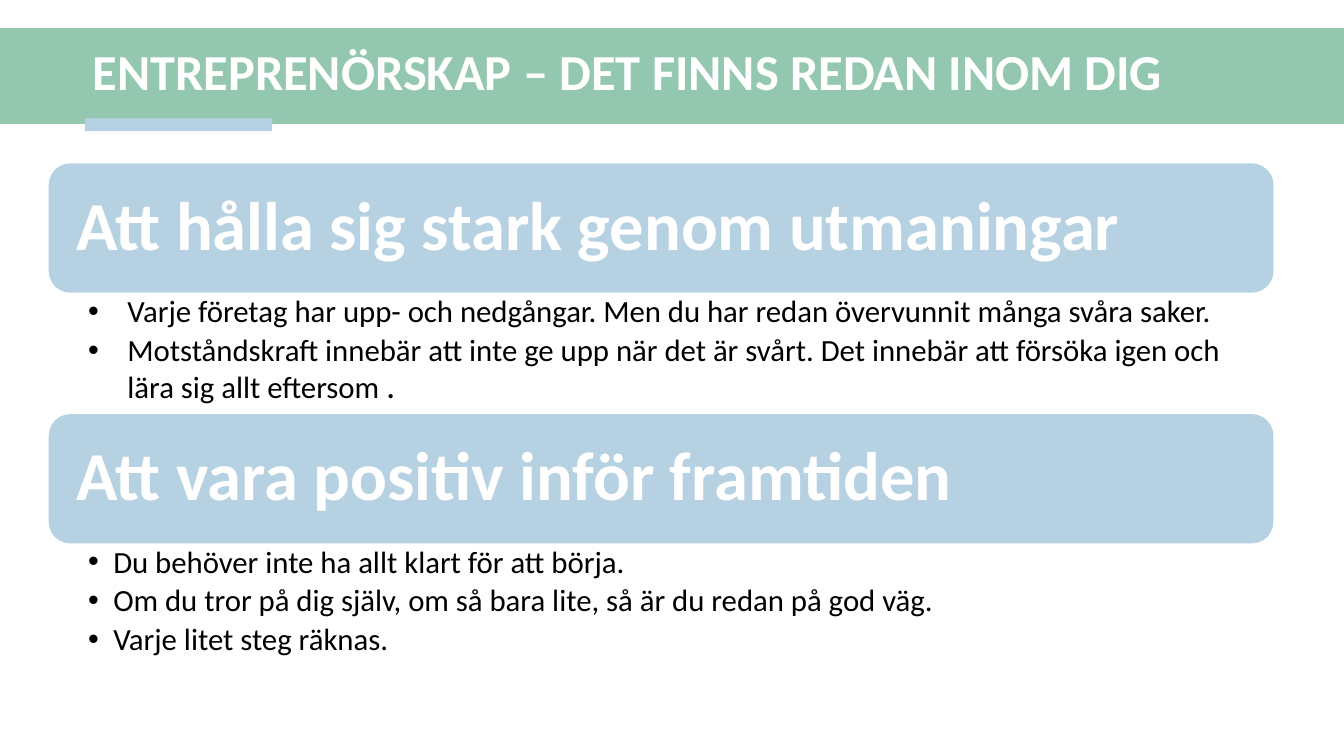
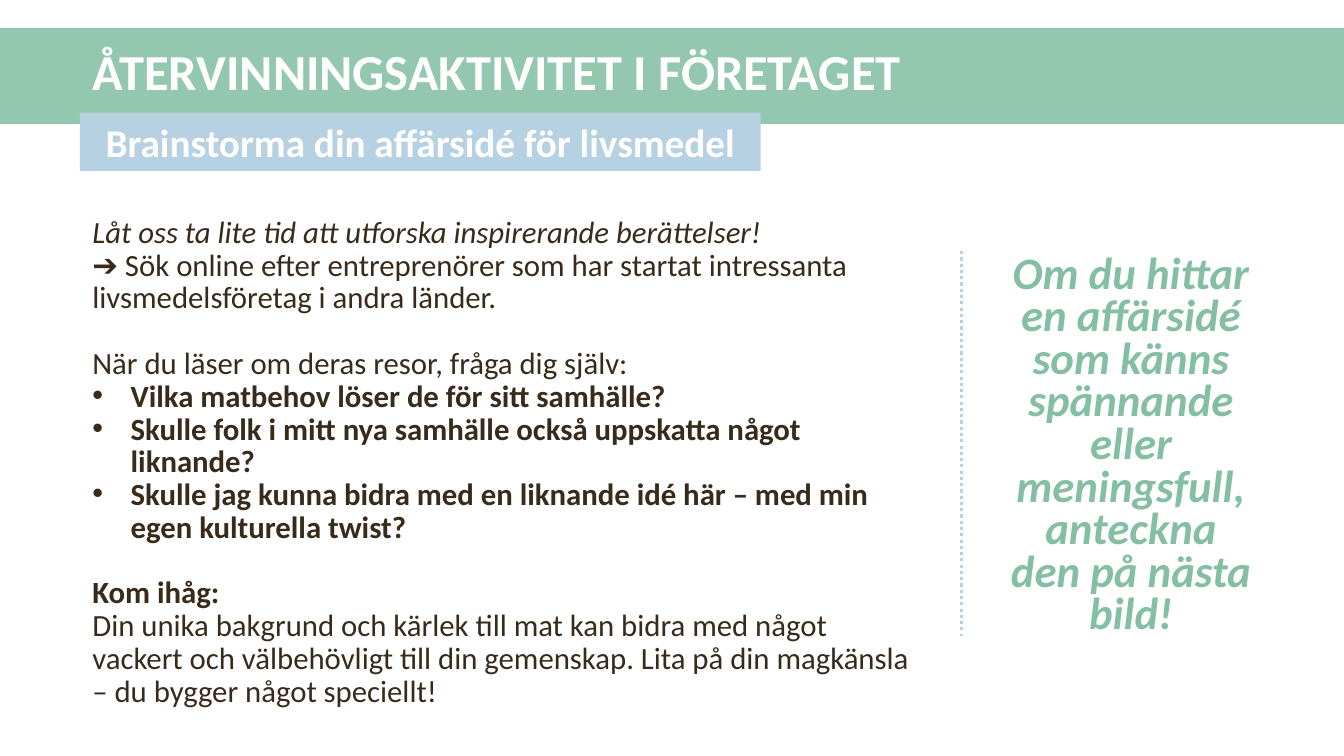
from lxml import etree
from pptx import Presentation, util as u
from pptx.dml.color import RGBColor
from pptx.enum import dml, shapes, text
from pptx.oxml.ns import qn

GREEN, BLUE, LETTER_GREEN = "94C7B0", "B6D1E1", "84BFA4"
WHITE, BLACK, BROWN = "FFFFFF", "000000", "382B1B"
FONT = "Calibri"
LEFT, CENTRE = text.PP_ALIGN.LEFT, text.PP_ALIGN.CENTER
TOP, MIDDLE = text.MSO_ANCHOR.TOP, text.MSO_ANCHOR.MIDDLE
RECTANGLE = shapes.MSO_SHAPE.RECTANGLE
BOLD = {"bold": True}
tint = RGBColor.from_string

deck = Presentation()
deck.slide_width, deck.slide_height = u.Inches(40 / 3), u.Inches(7.5)
UNIT = deck.slide_width / 32  # square grid: 32 columns by 18 rows


def grid(*units):
    """Turn grid columns and rows into slide lengths."""
    return [u.Emu(round(UNIT * number)) for number in units]


def write(box, lines, size, colour, spacing=0.9, after=0, align=LEFT, anchor=TOP):
    """Fill a box with (text, style) lines; styles: bold, italic, indent, before."""
    frame = box.text_frame
    frame.word_wrap, frame.auto_size = True, text.MSO_AUTO_SIZE.NONE
    frame.vertical_anchor = anchor
    frame.text = "\n".join(words for words, style in lines)
    for para, (words, style) in zip(frame.paragraphs, lines):
        indent = u.Inches(style.get("indent", 0))
        props = para._p.get_or_add_pPr()
        props.set("marL", str(indent))
        props.set("indent", str(-indent))
        if indent:
            etree.SubElement(props, qn("a:buFont")).set("typeface", "Arial")
            etree.SubElement(props, qn("a:buChar")).set("char", "•")
        else:
            etree.SubElement(props, qn("a:buNone"))
        para.alignment, para.line_spacing = align, spacing
        para.space_before = u.Pt(style.get("before", 0))
        para.space_after = u.Pt(after)
        for span in para.runs:
            span.font.name, span.font.size = FONT, u.Pt(size)
            span.font.color.rgb = tint(colour)
            span.font.bold = style.get("bold", False)
            span.font.italic = style.get("italic", False)


# Both pages share the title style and the green band behind it
layout = deck.slide_layouts.get_by_name("Two Content")
strength, activity = [deck.slides.add_slide(layout) for number in range(2)]
panels = []
for page, words in (
    (strength, "ENTREPRENÖRSKAP – DET FINNS REDAN INOM DIG"),
    (activity, "ÅTERVINNINGSAKTIVITET I FÖRETAGET"),
):
    band = page.shapes.add_shape(RECTANGLE, *grid(0, 0.67, 32, 2.28))
    page.shapes.element.insert(2, band.element)
    panels.append((band, GREEN))
    title = page.shapes.title
    title.left, title.top, title.width, title.height = grid(1.97, 0.82, 28.63, 1.9)
    write(title, [(words, BOLD)], 36, WHITE, anchor=MIDDLE)

# Page 1: accent under the title, then two headings with their lists
accent = strength.shapes.add_shape(RECTANGLE, *grid(2.02, 2.82, 4.46, 0.3))
panels.append((accent, BLUE))
sections = [
    ("Att hålla sig stark genom utmaningar", 0.39, [
        "Varje företag har upp- och nedgångar. Men du har redan övervunnit många svåra saker.",
        "Motståndskraft innebär att inte ge upp när det är svårt. "
        "Det innebär att försöka igen och lära sig allt eftersom ",
    ]),
    ("Att vara positiv inför framtiden", 0.25, [
        "Du behöver inte ha allt klart för att börja.",
        "Om du tror på dig själv, om så bara lite, så är du redan på god väg.",
        "Varje litet steg räknas.",
    ]),
]
HEADING_HEIGHT = 3.08
for index, (heading, indent, points) in enumerate(sections):
    top = 3.89 + 5.97 * index
    panel = strength.shapes.add_shape(
        shapes.MSO_SHAPE.ROUNDED_RECTANGLE, *grid(1.16, top, 29.16, HEADING_HEIGHT))
    panels.append((panel, BLUE))
    panel.text_frame.margin_left = u.Inches(0.21)
    write(panel, [(heading, BOLD)], 49, WHITE, anchor=MIDDLE)

    box = strength.placeholders[index + 1]
    box.left, box.top, box.width, box.height = grid(1.16, top + HEADING_HEIGHT, 29.16, 2.87)
    write(box, [(point, {"indent": indent}) for point in points], 22, BLACK, after=4)
    frame = box.text_frame
    frame.margin_left, frame.margin_right = u.Inches(0.39), u.Inches(0.17)
    frame.margin_top = frame.margin_bottom = u.Inches(0.03)

# Larger full stop closing the first list
stop = strength.placeholders[1].text_frame.paragraphs[-1].add_run()
stop.text = "."
stop.font.name, stop.font.size = FONT, u.Pt(25)
stop.font.color.rgb = tint(BLACK)

# Page 2: instructions
body, callout = activity.placeholders[1], activity.placeholders[2]
body.left, body.top, body.width, body.height = grid(1.96, 5.04, 20.28, 11.02)
LINE = 23.4
question = {"bold": True, "indent": 0.38}
write(body, [
    ("Låt oss ta lite tid att utforska inspirerande berättelser!", {"italic": True}),
    ("➔ Sök online efter entreprenörer som har startat intressanta "
     "livsmedelsföretag i andra länder.", {}),
    ("När du läser om deras resor, fråga dig själv:", {"before": LINE}),
    ("Vilka matbehov löser de för sitt samhälle?", question),
    ("Skulle folk i mitt nya samhälle också uppskatta något liknande?", question),
    ("Skulle jag kunna bidra med en liknande idé här – med min egen kulturella twist?",
     question),
    ("Kom ihåg:", {"bold": True, "before": LINE}),
    ("Din unika bakgrund och kärlek till mat kan bidra med något vackert och "
     "välbehövligt till din gemenskap. Lita på din magkänsla – du bygger något speciellt!",
     {}),
], 22, BROWN, spacing=u.Pt(LINE))

# Page 2: callout beside a dotted divider
callout.left, callout.top, callout.width, callout.height = grid(23.76, 5.97, 6.34, 9.17)
write(callout, [
    ("Om du hittar en affärsidé som känns spännande eller meningsfull, "
     "anteckna den på nästa bild!", {"bold": True, "italic": True}),
], 32, LETTER_GREEN, spacing=u.Pt(30.4), align=CENTRE)
divider = activity.shapes.add_connector(
    shapes.MSO_CONNECTOR.STRAIGHT, *grid(22.9, 5.98, 22.9, 15.15))
divider.line.color.rgb, divider.line.width = tint(BLUE), u.Pt(2.25)
divider.line.dash_style = dml.MSO_LINE.ROUND_DOT
etree.SubElement(divider.element.spPr, qn("a:effectLst"))

# Page 2: subtitle tag
tag = activity.shapes.add_shape(RECTANGLE, *grid(1.9, 2.69, 16.21, 1.38))
panels.append((tag, BLUE))
write(tag, [("Brainstorma din affärsidé för livsmedel", BOLD)], 28, WHITE,
      spacing=1.0, align=CENTRE, anchor=MIDDLE)

# Flat colour on every panel
for panel, colour in panels:
    panel.shadow.inherit = False
    panel.fill.solid()
    panel.fill.fore_color.rgb = tint(colour)
    panel.line.fill.background()

deck.save("out.pptx")
